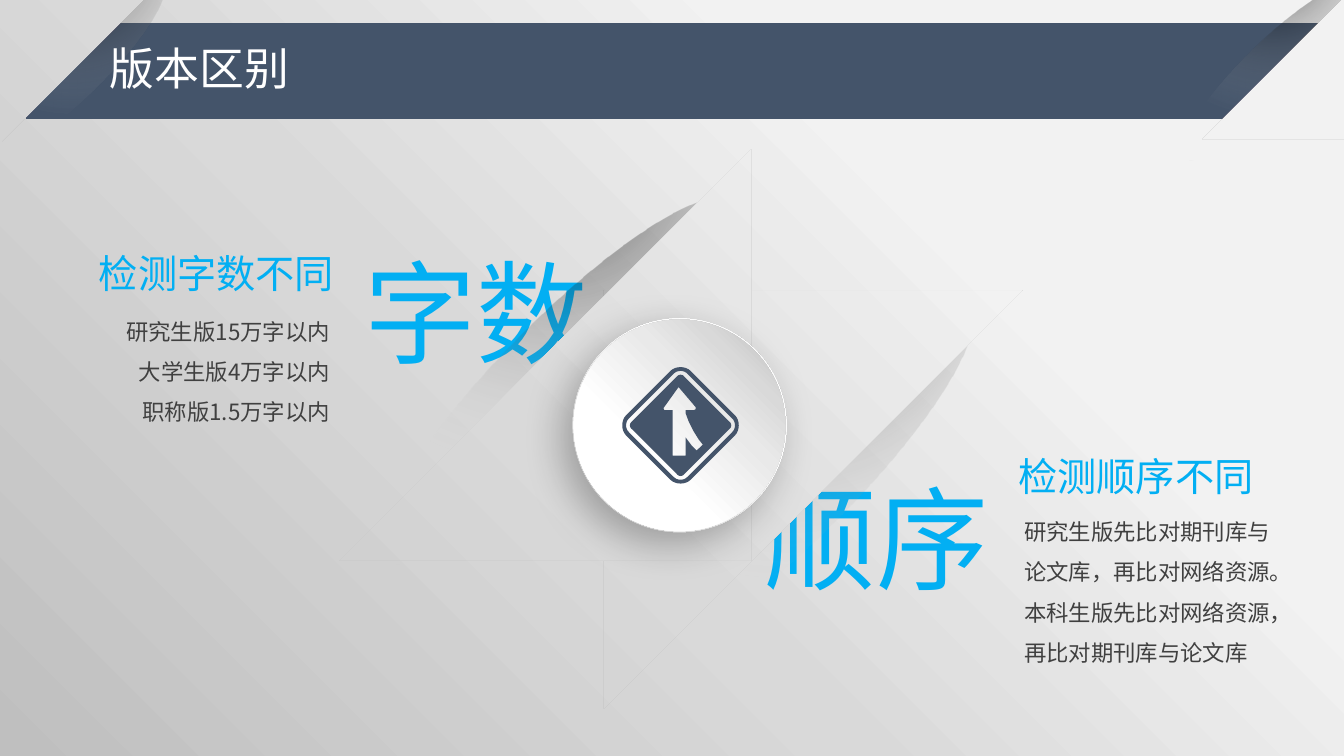
from lxml.etree import SubElement
from pptx import Presentation
from pptx.dml.color import RGBColor
from pptx.enum.shapes import MSO_SHAPE
from pptx.enum.text import MSO_AUTO_SIZE, PP_ALIGN
from pptx.oxml.ns import qn
from pptx.util import Inches, Pt

NAVY, SKY, GREY, WHITE = "44546A", "02AFF3", "404040", "FFFFFF"
TOP_RIGHT, BOTTOM_LEFT, ABOVE = (100, 0, 0, 100), (0, 100, 100, 0), (50, -80, 50, 180)
BACKDROP = [(9, "F2F2F2"), (29, "F2F2F2"), (59, "D9D9D9"), (100, "BFBFBF")]
SHADE = [(0, "404040", 40), (32, "000000", 30), (100, "E7E6E6", 0)]
RIM = [(0, WHITE), (35, WHITE), (100, "BFBFBF")]
DISC = [(0, WHITE), (35, WHITE), (63, "E9E9E9"), (79, "D9D9D9"), (95, "BFBFBF")]
SIGN_CENTRE = (6.75, 4.22)
MERGE_ARROW = [
    (6.91, 4.47), (6.86, 4.42), (6.8, 4.34), (6.8, 4.52), (6.67, 4.52), (6.67, 4.07),
    (6.59, 4.07), (6.58, 4.05), (6.73, 3.84), (6.9, 4.04), (6.9, 4.06), (6.88, 4.07),
    (6.8, 4.07), (6.8, 4.1), (6.83, 4.18), (6.88, 4.28), (6.93, 4.36), (6.97, 4.41),
]


def colour(code):
    return RGBColor.from_string(code)


def add_colour(parent, code, alpha=100):
    tone = SubElement(parent, qn("a:srgbClr"), val=code)
    if alpha < 100:
        SubElement(tone, qn("a:alpha"), val=str(alpha * 1000))


def rounded_diamond(flat, shoulder, tip, steps=8):
    corner = []
    for step in range(steps + 1):
        t = step / steps
        across = -flat * (1 - t) ** 3 - 1.5 * flat * t * (1 - t) ** 2
        across += 1.5 * flat * t**2 * (1 - t) + flat * t**3
        bulge = 3 * t * (1 - t)
        corner.append((across, -shoulder - (tip - shoulder) * bulge))
    outline = []
    for _ in range(4):
        outline += [(SIGN_CENTRE[0] + x, SIGN_CENTRE[1] + y) for x, y in corner]
        corner = [(-y, x) for x, y in corner]
    return outline


class SlidePainter:
    """Draws styled elements on the current slide."""

    font = "Noto Sans CJK SC"

    def __init__(self, slide):
        self.slide = slide

    def gradient(self, fill, element, stops, focus):
        fill.gradient()
        grad = next(element.iter(qn("a:gradFill")))
        for child in list(grad):
            grad.remove(child)
        stop_list = SubElement(grad, qn("a:gsLst"))
        for position, *tone in stops:
            add_colour(SubElement(stop_list, qn("a:gs"), pos=str(position * 1000)), *tone)
        circle = SubElement(grad, qn("a:path"), path="circle")
        edges = {side: str(value * 1000) for side, value in zip("ltrb", focus)}
        SubElement(circle, qn("a:fillToRect"), **edges)

    def background(self):
        self.gradient(self.slide.background.fill, self.slide.element, BACKDROP, TOP_RIGHT)

    def shape(self, kind, place, rotation=0, flip=False):
        shape = self.slide.shapes.add_shape(kind, *map(Inches, place))
        shape.rotation = rotation
        if flip:
            next(shape.element.iter(qn("a:xfrm"))).set("flipH", "1")
        shape.line.fill.background()
        shape.shadow.inherit = False
        return shape

    def band(self, place, code):
        band = self.shape(MSO_SHAPE.RECTANGLE, place)
        band.fill.solid()
        band.fill.fore_color.rgb = colour(code)

    def ellipse(self, place, stops, focus, rotation=0, flip=False):
        ellipse = self.shape(MSO_SHAPE.OVAL, place, rotation, flip)
        self.gradient(ellipse.fill, ellipse.element, stops, focus)
        return ellipse

    def mask(self, place, rotation=0, flip=False):
        mask = self.shape(MSO_SHAPE.RIGHT_TRIANGLE, place, rotation, flip).element
        mask.remove(mask.find(qn("p:style")))
        mask.set("useBgFill", "1")

    def cast_shadow(self, shape, code, alpha, blur, distance, angle):
        effects = next(shape.element.iter(qn("a:effectLst")))
        shadow = SubElement(
            effects, qn("a:outerShdw"), blurRad=str(Pt(blur)), dist=str(Pt(distance)),
            dir=str(angle * 60000), algn="ctr", rotWithShape="0",
        )
        add_colour(shadow, code, alpha)

    def outline(self, contours, code):
        builder = None
        for contour in contours:
            start, *rest = [(Inches(x), Inches(y)) for x, y in contour]
            if builder is None:
                builder = self.slide.shapes.build_freeform(*start)
            else:
                builder.move_to(*start)
            builder.add_line_segments(rest, close=True)
        sign = builder.convert_to_shape()
        sign.fill.solid()
        sign.fill.fore_color.rgb = colour(code)
        sign.line.fill.background()
        sign.shadow.inherit = False

    def text(self, place, lines, size, code, wrap=True, **layout):
        box = self.slide.shapes.add_textbox(*map(Inches, place))
        frame = box.text_frame
        frame.word_wrap = wrap
        frame.auto_size = MSO_AUTO_SIZE.SHAPE_TO_FIT_TEXT
        frame.text = "\n".join(lines)
        for paragraph in frame.paragraphs:
            for name, value in layout.items():
                setattr(paragraph, name, value)
            for run in paragraph.runs:
                for name, value in {"size": Pt(size), "name": self.font}.items():
                    setattr(run.font, name, value)
                run.font.color.rgb = colour(code)
        for properties in box.element.iter(qn("a:rPr")):
            properties.set("lang", "zh-CN")
            SubElement(properties, qn("a:ea"), typeface=self.font)


def main():
    deck = Presentation()
    deck.slide_width, deck.slide_height = Inches(13.33), Inches(7.5)
    painter = SlidePainter(deck.slides.add_slide(deck.slide_layouts[6]))
    right = {"alignment": PP_ALIGN.RIGHT}
    spaced = {"line_spacing": 1.5}

    painter.background()
    painter.band((0.26, 0.23, 13.07, 0.95), NAVY)
    painter.ellipse((-0.51, 0.39, 2.47, 0.59), SHADE, ABOVE, 315.5)
    painter.mask((0.02, 0, 1.4, 1.4), 90)
    painter.ellipse((11.39, 0.41, 2.47, 0.59), SHADE, ABOVE, 135.5)
    painter.mask((11.93, -0.02, 1.4, 1.4), 270)

    painter.text((7.48, 4.61, 2.45, 1.45), ["顺序"], 80, SKY, wrap=False)
    painter.ellipse((5.26, 4.22, 5.06, 1.2), SHADE, ABOVE, 315.5)
    painter.mask((5.99, 2.88, 4.15, 4.15), 90)
    painter.text((3.52, 2.37, 2.45, 1.45), ["字数"], 80, SKY, wrap=False)
    painter.ellipse((3.06, 3.19, 4.97, 1.18), SHADE, ABOVE, 134.5, flip=True)
    painter.mask((3.37, 1.48, 4.08, 4.08), flip=True)

    rim = painter.ellipse((5.68, 3.16, 2.12, 2.12), RIM, TOP_RIGHT)
    painter.cast_shadow(rim, "000000", 27, 29, 11, 133)
    painter.ellipse((5.69, 3.17, 2.1, 2.1), DISC, BOTTOM_LEFT)
    sign_border = [rounded_diamond(0.1, 0.54, 0.59), rounded_diamond(0.07, 0.51, 0.55)]
    painter.outline(sign_border, NAVY)
    painter.outline([rounded_diamond(0.04, 0.48, 0.51), MERGE_ARROW], NAVY)

    limits = ["研究生版15万字以内", "大学生版4万字以内", "职称版1.5万字以内"]
    painter.text((0.32, 2.97, 3.05, 1.31), limits, 16, GREY, **right, **spaced)
    painter.text((0.84, 2.42, 2.57, 0.57), ["检测字数不同"], 28, SKY, **right)
    painter.text((9.96, 4.44, 2.57, 0.57), ["检测顺序不同"], 28, SKY, **right)
    orders = [
        "研究生版先比对期刊库与论文库，再比对网络资源。",
        "本科生版先比对网络资源，再比对期刊库与论文库",
    ]
    painter.text((10.06, 4.96, 2.83, 1.72), orders, 16, GREY, **spaced)
    painter.text((0.99, 0.36, 2, 0.64), ["版本区别"], 32, WHITE, wrap=False)
    deck.save("out.pptx")


if __name__ == "__main__":
    main()
